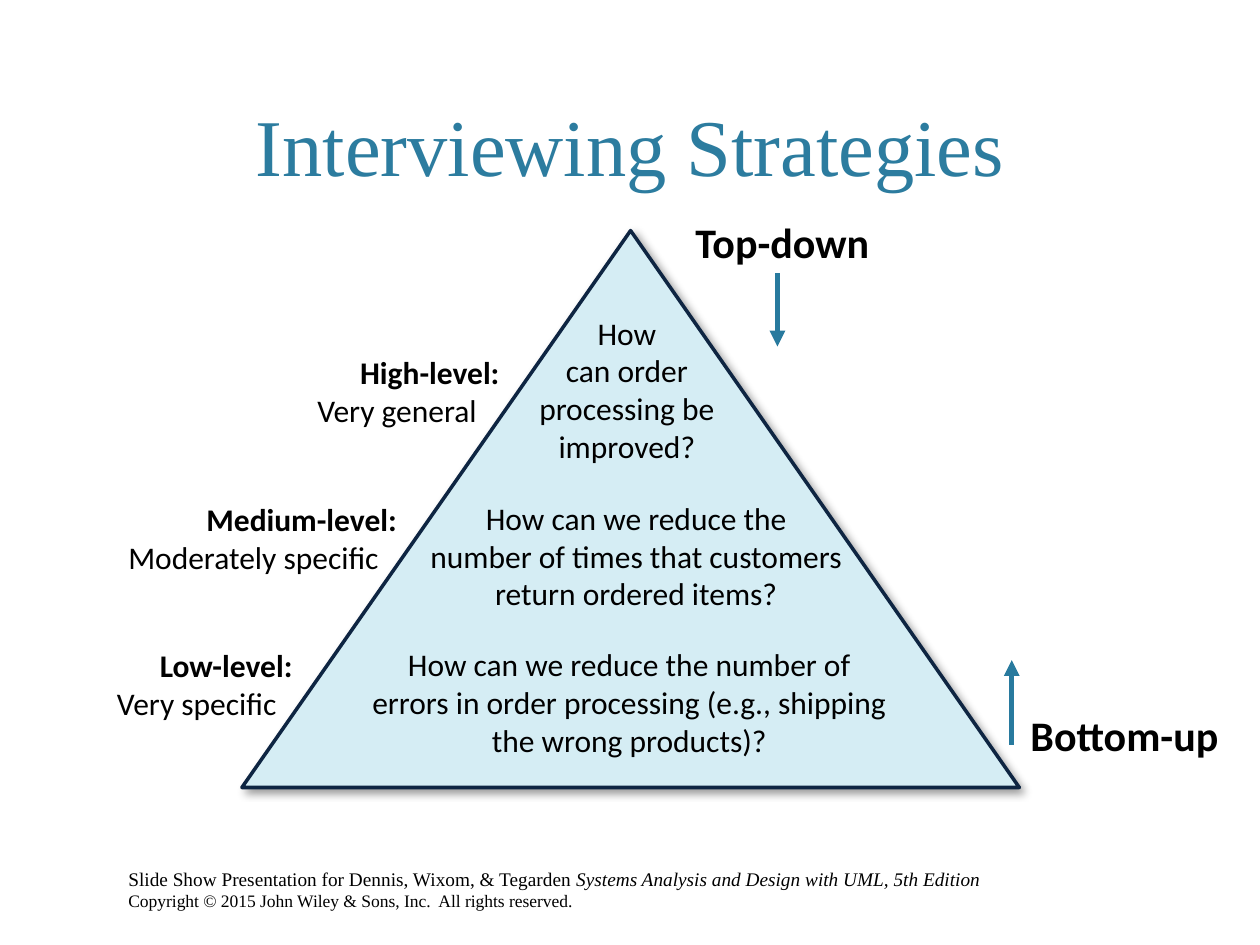
from lxml import etree
from pptx import Presentation
from pptx.dml.color import RGBColor
from pptx.enum.shapes import MSO_CONNECTOR, MSO_SHAPE
from pptx.enum.text import MSO_ANCHOR, PP_ALIGN
from pptx.oxml.ns import qn
from pptx.util import Inches, Pt

TRIANGLE = MSO_SHAPE.ISOSCELES_TRIANGLE
STRAIGHT = MSO_CONNECTOR.STRAIGHT
LEFT, CENTER = PP_ALIGN.LEFT, PP_ALIGN.CENTER
BOTTOM = MSO_ANCHOR.BOTTOM

SERIF, SANS = "Times New Roman", "Calibri"
BLACK = RGBColor(0x00, 0x00, 0x00)
WHITE = RGBColor(0xFF, 0xFF, 0xFF)
TITLE_BLUE = RGBColor(0x2C, 0x7C, 0x9F)
ARROW_BLUE = RGBColor(0x28, 0x7A, 0x9E)
PALE_BLUE = RGBColor(0xD5, 0xED, 0xF4)
NAVY = RGBColor(0x0E, 0x25, 0x42)

TITLE = "Interviewing Strategies"
BOOK = ("Slide Show Presentation for Dennis, Wixom, & Tegarden ",
        "Systems Analysis and Design with UML, 5th Edition")
COPYRIGHT = "Copyright © 2015 John Wiley & Sons, Inc.  All rights reserved."

# lines, (left, top, width, height)
QUESTIONS = [
    (["How", "can order", "processing be", "improved?"],
     (4.17, 2.44, 1.61, 1.31)),
    (["How can we reduce the", "number of times that customers",
      "return ordered items?"],
     (3.27, 3.91, 3.56, 1.01)),
    (["How can we reduce the number of",
      "errors in order processing (e.g., shipping",
      "the wrong products)?"],
     (2.83, 5.07, 4.33, 1.01)),
]
# level, description, indent of the level, (left, top, width, height)
LEVELS = [
    ("High-level:", "Very general", 0.34, (2.42, 2.75, 1.76, 0.71)),
    ("Medium-level:", "Moderately specific", 0.62, (0.92, 3.92, 2.46, 0.71)),
    ("Low-level:", "Very specific", 0.34, (0.83, 5.08, 1.72, 0.71)),
]
# direction, (left, top, width, height), arrow x, arrow start y, arrow end y
DIRECTIONS = [
    ("Top-down", (5.42, 1.67, 1.7, 0.51), 6.17, 2.17, 2.75),
    ("Bottom-up", (8.08, 5.58, 1.82, 0.51), 8.03, 5.91, 5.24),
]


def add_text(slide, lines, box, size, font=SANS, align=LEFT, bold=False):
    label = slide.shapes.add_textbox(*map(Inches, box))
    frame = label.text_frame
    frame.word_wrap = align == LEFT
    frame.text = "\n".join(lines)
    for paragraph in frame.paragraphs:
        paragraph.alignment = align
        paragraph.font.name = font
        paragraph.font.size = Pt(size)
        paragraph.font.bold = bold
        paragraph.font.color.rgb = BLACK
    return label


def add_arrow(slide, x, start, end):
    arrow = slide.shapes.add_connector(
        STRAIGHT, Inches(x), Inches(start), Inches(x), Inches(end))
    arrow.line.color.rgb = ARROW_BLUE
    arrow.line.width = Pt(3)
    etree.SubElement(arrow.line._get_or_add_ln(), qn("a:tailEnd"), type="triangle")
    etree.SubElement(arrow._element.spPr, qn("a:effectLst"))


def add_soft_shadow(shape):
    shape.shadow.inherit = False
    effects = shape._element.spPr.find(qn("a:effectLst"))
    shadow = etree.SubElement(
        effects, qn("a:outerShdw"), blurRad=str(Pt(5)), dist=str(Pt(3)),
        dir=str(45 * 60000), algn="tl", rotWithShape="0")
    color = etree.SubElement(shadow, qn("a:srgbClr"), val=str(BLACK))
    etree.SubElement(color, qn("a:alpha"), val="40000")


def add_title(slide):
    title = slide.shapes.title
    title.left, title.top, title.width, title.height = map(
        Inches, (0.6, 0.12, 8.8, 1.46))
    title.text_frame.text = TITLE
    title.text_frame.vertical_anchor = BOTTOM
    heading = title.text_frame.paragraphs[0]
    heading.alignment = CENTER
    heading.font.name = SERIF
    heading.font.size = Pt(46)
    heading.font.color.rgb = TITLE_BLUE


def add_credit(slide):
    credit = add_text(slide, [BOOK[0], COPYRIGHT], (0.92, 6.83, 7.61, 0.45), 11, SERIF)
    book, rights = credit.text_frame.paragraphs
    book_title = book.add_run()
    book_title.text = BOOK[1]
    book_title.font.italic = True
    rights.font.size = Pt(10)


def main():
    prs = Presentation()
    prs.slide_width, prs.slide_height = Inches(10), Inches(7.5)
    slide = prs.slides.add_slide(prs.slide_layouts[5])
    add_credit(slide)
    add_title(slide)

    pyramid = slide.shapes.add_shape(
        TRIANGLE, *map(Inches, (1.92, 1.83, 6.17, 4.42)))
    pyramid.fill.solid()
    pyramid.fill.fore_color.rgb = PALE_BLUE
    pyramid.line.color.rgb = NAVY
    pyramid.line.width = Pt(2)
    add_soft_shadow(pyramid)

    for lines, box in QUESTIONS:
        add_text(slide, lines, box, 18, align=CENTER)

    for direction, box, x, start, end in DIRECTIONS:
        label = add_text(slide, [direction], box, 24, bold=True)
        if direction == "Bottom-up":
            label.fill.solid()
            label.fill.fore_color.rgb = WHITE
        add_arrow(slide, x, start, end)

    for level, description, indent, box in LEVELS:
        label = add_text(slide, [level, description], box, 18)
        heading = label.text_frame.paragraphs[0]
        heading.font.bold = True
        heading._p.get_or_add_pPr().set("marL", str(Inches(indent)))

    prs.save("out.pptx")


if __name__ == "__main__":
    main()
